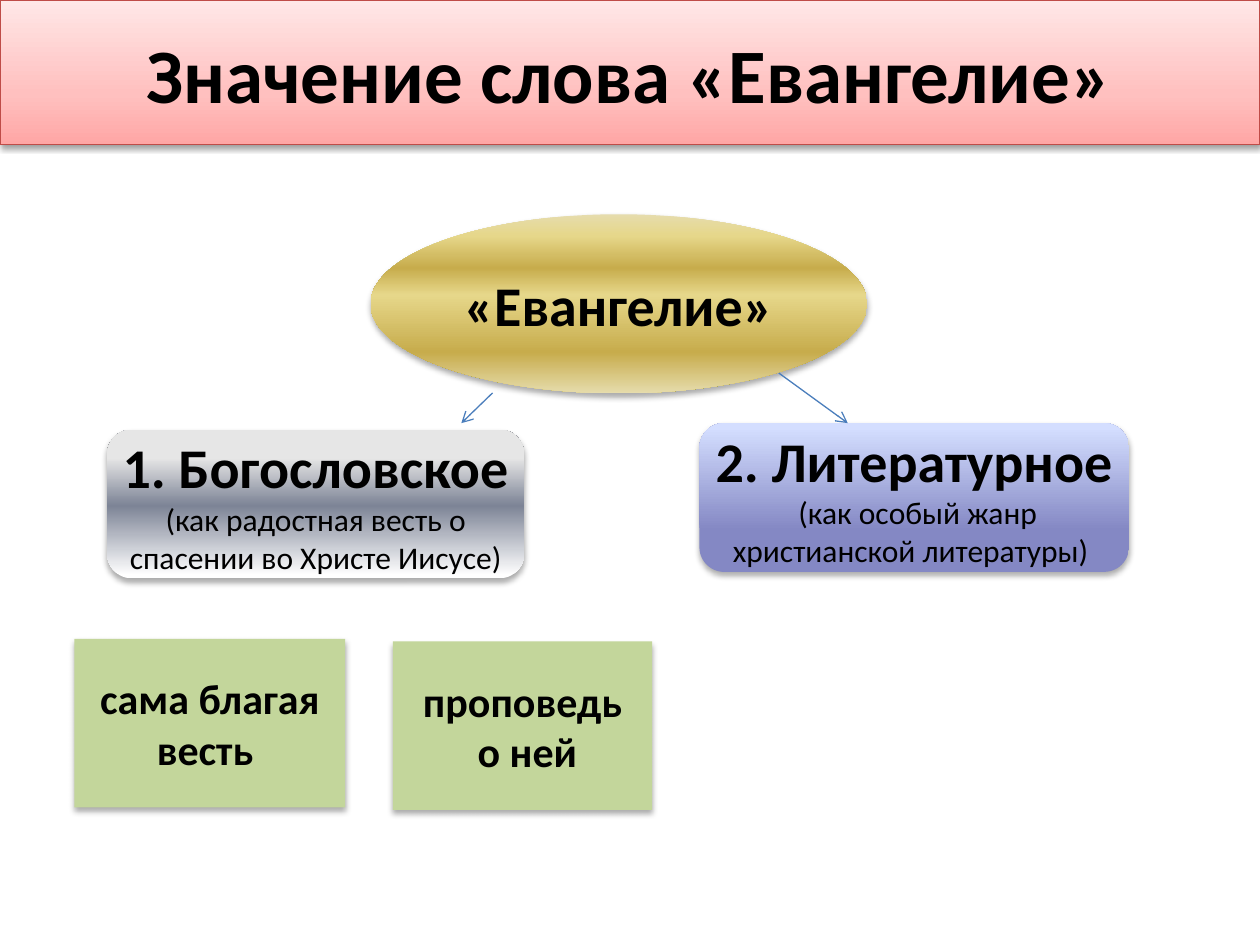
import pptx
import pptx.util
import pptx.dml.color
import pptx.enum.shapes
import pptx.enum.text
import pptx.oxml.ns
from lxml import etree

Cm, Pt = pptx.util.Cm, pptx.util.Pt
RGB = pptx.dml.color.RGBColor.from_string
SHAPE = pptx.enum.shapes.MSO_SHAPE
qn = pptx.oxml.ns.qn

COLORS = {
    "text": "000000",
    "shadow": "000000",
    "title_line": "BF4C48",
    "arrow": "4B7EBC",
    "green": "C3D69B",
}
ROSE = [(0, "FFA6A5"), (35, "FFC0BF"), (100, "FFE7E7")]
SILVER = [(2, "FFFFFF"), (49, "7D8496"), (81, "E6E6E6"), (83, "E6E6E6")]
GOLD = [(0, "E6DCAC"), (12, "E6D78A"), (30, "C7AC4C"),
        (45, "E6D78A"), (77, "C7AC4C"), (100, "E6DCAC")]
BLUE = [(28, "8488C4"), (97, "D4DEFF")]


def add_color(parent, color, alpha=None):
    clr = etree.SubElement(parent, qn("a:srgbClr"), val=color)
    if alpha is not None:
        etree.SubElement(clr, qn("a:alpha"), val=str(alpha * 1000))


def add_box(kind, box, fill, lines, line=None, inset=0.1, shadow=(32, 3.5, 2.2)):
    sp = s.shapes.add_shape(kind, *[Cm(v) for v in box])
    if isinstance(fill, str):
        sp.fill.solid()
        sp.fill.fore_color.rgb = RGB(fill)
    else:
        sp.fill.gradient()
        sp.fill.gradient_angle = 270 if fill is GOLD else 90
        stops = sp._element.spPr.find(".//" + qn("a:gsLst"))
        for gs in list(stops):
            stops.remove(gs)
        for pos, color in fill:
            add_color(etree.SubElement(stops, qn("a:gs"), pos=str(pos * 1000)), color)
    if line:
        sp.line.color.rgb = RGB(line)
        sp.line.width = Pt(0.75)
    else:
        sp.line.fill.background()

    sp.shadow.inherit = False
    alpha, blur, dist = shadow
    outer = etree.SubElement(
        sp._element.spPr.find(qn("a:effectLst")), qn("a:outerShdw"),
        blurRad=str(Pt(blur)), dist=str(Pt(dist)), dir="5400000", rotWithShape="0")
    add_color(outer, COLORS["shadow"], alpha)

    tf = sp.text_frame
    tf.word_wrap = True
    tf.vertical_anchor = pptx.enum.text.MSO_ANCHOR.MIDDLE
    if inset:
        tf.margin_left = tf.margin_right = tf.margin_top = tf.margin_bottom = Cm(inset)
    tf.text = "\n".join(text for text, size, bold in lines)
    for p, (text, size, bold) in zip(tf.paragraphs, lines):
        p.alignment = pptx.enum.text.PP_ALIGN.CENTER
        for r in p.runs:
            r.font.name = "Calibri"
            r.font.size = Pt(size)
            r.font.bold = bold
            r.font.color.rgb = RGB(COLORS["text"])


prs = pptx.Presentation()
prs.slide_width, prs.slide_height = Cm(25.4), Cm(19.05)
s = prs.slides.add_slide(prs.slide_layouts[6])

add_box(SHAPE.RECTANGLE, (0, 0, 25.4, 2.92), ROSE,
        [("Значение слова «Евангелие»", 44, True)],
        line=COLORS["title_line"], inset=None, shadow=(38, 3.1, 1.6))
add_box(SHAPE.ROUNDED_RECTANGLE, (2.16, 8.66, 8.41, 3), SILVER,
        [("1. Богословское ", 32, True),
         ("(как радостная весть о спасении во Христе Иисусе)", 18, False)])
add_box(SHAPE.OVAL, (7.47, 4.32, 10.01, 3.61), GOLD,
        [("«Евангелие»", 32, True)], inset=None)
add_box(SHAPE.ROUNDED_RECTANGLE, (14.1, 8.53, 8.66, 3), BLUE,
        [("2. Литературное ", 32, True),
         (" (как особый жанр христианской литературы) ", 18, False)])
add_box(SHAPE.RECTANGLE, (1.5, 12.88, 5.46, 3.4), COLORS["green"],
        [("сама благая весть ", 24, True)])
add_box(SHAPE.RECTANGLE, (7.92, 12.93, 5.23, 3.4), COLORS["green"],
        [("проповедь", 24, True), (" о ней", 24, True)])

for ends in [(9.93, 7.92, 9.3, 8.53), (15.7, 7.52, 17.09, 8.53)]:
    cn = s.shapes.add_connector(pptx.enum.shapes.MSO_CONNECTOR.STRAIGHT,
                                *[Cm(v) for v in ends])
    cn.line.color.rgb = RGB(COLORS["arrow"])
    cn.line.width = Pt(0.75)
    etree.SubElement(cn.line._get_or_add_ln(), qn("a:tailEnd"), type="arrow")
    etree.SubElement(cn._element.spPr, qn("a:effectLst"))

prs.save("out.pptx")
